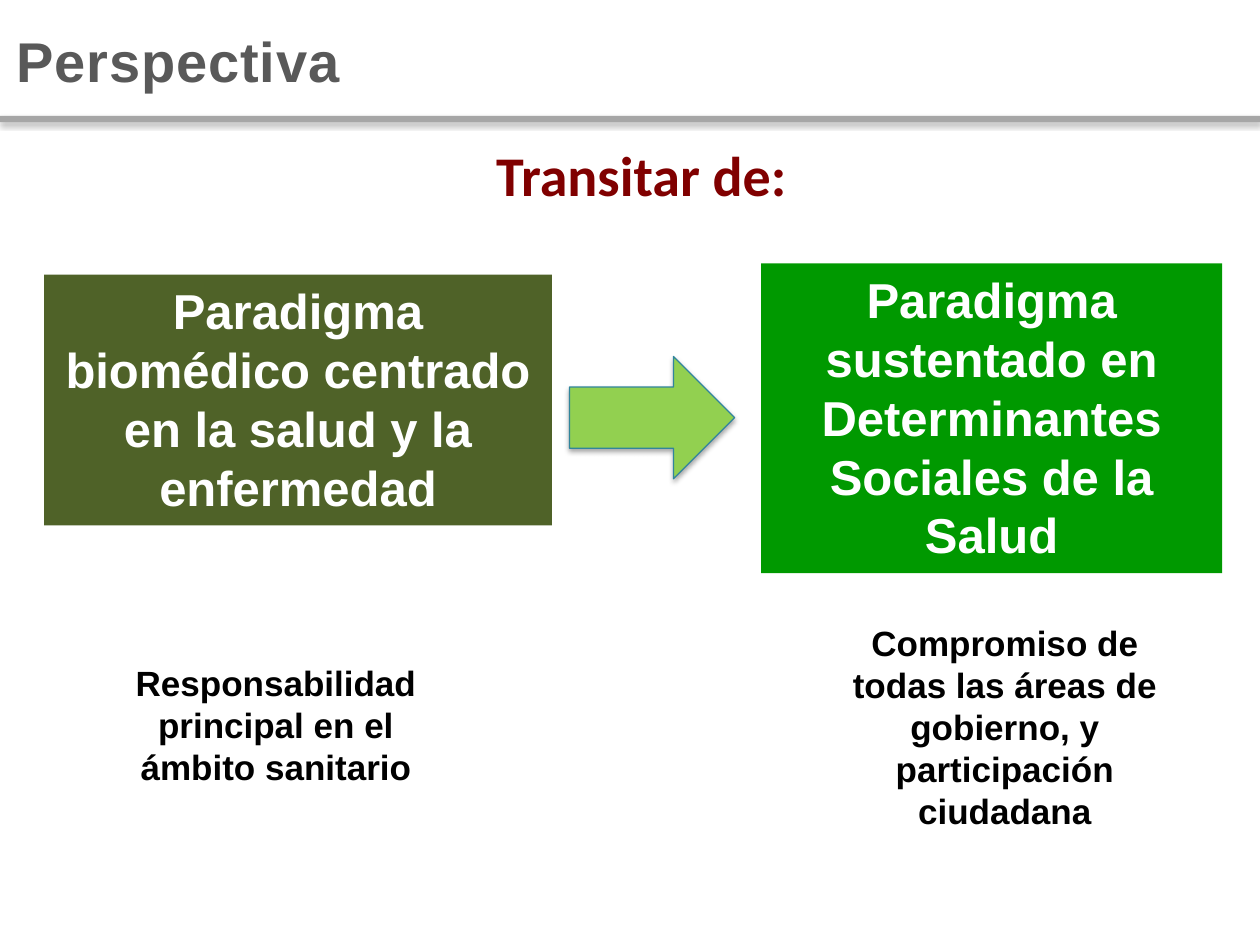
import pptx
import pptx.util
import pptx.dml.color
import pptx.enum.shapes
import pptx.enum.text
import pptx.oxml

Inches = pptx.util.Inches
Pt = pptx.util.Pt
Kind = pptx.enum.shapes.MSO_SHAPE
Align = pptx.enum.text.PP_ALIGN
Anchor = pptx.enum.text.MSO_ANCHOR

COLORS = {
    "white": "FFFFFF", "black": "000000", "gray": "595959", "rule": "A6A6A6",
    "olive": "4F6228", "green": "009900", "lime": "92D050", "teal": "31859C",
    "maroon": "800000",
}
SHADOW = (
    '<a:effectLst xmlns:a="http://schemas.openxmlformats.org/drawingml/2006/main">'
    '<a:outerShdw blurRad="39370" dist="22860" dir="5400000" rotWithShape="0">'
    '<a:srgbClr val="000000"><a:alpha val="35000"/></a:srgbClr>'
    '</a:outerShdw></a:effectLst>'
)


def color(name):
    return pptx.dml.color.RGBColor.from_string(COLORS[name])


def write(shape, text, size, tint, align, font="Arial"):
    """Put one bold run into the shape and return the run."""
    frame = shape.text_frame
    frame.word_wrap = True
    para = frame.paragraphs[0]
    para.alignment = align
    run = para.add_run()
    run.text = text
    run.font.name = font
    run.font.size = Pt(size)
    run.font.bold = True
    run.font.color.rgb = color(tint)
    return run


deck = pptx.Presentation()
deck.slide_width = Inches(10)
deck.slide_height = Inches(7.5)
slide = deck.slides.add_slide(deck.slide_layouts[6])
shapes = slide.shapes

# Header rule and title
rule = shapes.add_shape(Kind.RECTANGLE, Inches(0), Inches(0.92), Inches(10), Inches(0.05))
rule.fill.solid()
rule.fill.fore_color.rgb = color("rule")
rule.line.fill.background()
rule._element.spPr.append(pptx.oxml.parse_xml(SHADOW))

title = shapes.add_textbox(Inches(0.03), Inches(0.16), Inches(8.62), Inches(0.64))
run = write(title, "Perspectiva", 32, "gray", Align.LEFT)
run.font._element.set("spc", "50")

# Each paradigm with the responsibility below it
boxes = [
    (0.35, 2.18, 4.03, 1.99, "olive", "white", 28, Anchor.TOP,
     "Paradigma biomédico centrado en la salud y la enfermedad"),
    (0.95, 4.52, 2.48, 2.46, "white", "black", 20, Anchor.MIDDLE,
     "Responsabilidad principal en el ámbito sanitario"),
    (6.04, 2.09, 3.66, 2.46, "green", "white", 28, Anchor.TOP,
     "Paradigma sustentado en Determinantes Sociales de la Salud"),
    (6.57, 4.88, 2.81, 1.78, "white", "black", 20, Anchor.TOP,
     "Compromiso de todas las áreas de gobierno, y participación ciudadana"),
]
for left, top, width, height, fill, tint, size, anchor, text in boxes:
    box = shapes.add_shape(Kind.RECTANGLE, Inches(left), Inches(top),
                           Inches(width), Inches(height))
    box.shadow.inherit = False
    box.fill.solid()
    box.fill.fore_color.rgb = color(fill)
    box.line.fill.background()
    box.text_frame.vertical_anchor = anchor
    write(box, text, size, tint, Align.CENTER)

# Transition
lead = shapes.add_textbox(Inches(3.84), Inches(1.07), Inches(2.9), Inches(0.7))
write(lead, "Transitar de:", 32, "maroon", Align.JUSTIFY, "Calibri")

arrow = shapes.add_shape(Kind.RIGHT_ARROW, Inches(4.52), Inches(2.83),
                         Inches(1.31), Inches(0.97))
arrow.fill.solid()
arrow.fill.fore_color.rgb = color("lime")
arrow.line.color.rgb = color("teal")
arrow.line.width = Pt(0.75)
arrow._element.spPr.append(pptx.oxml.parse_xml(SHADOW))

deck.save("out.pptx")
